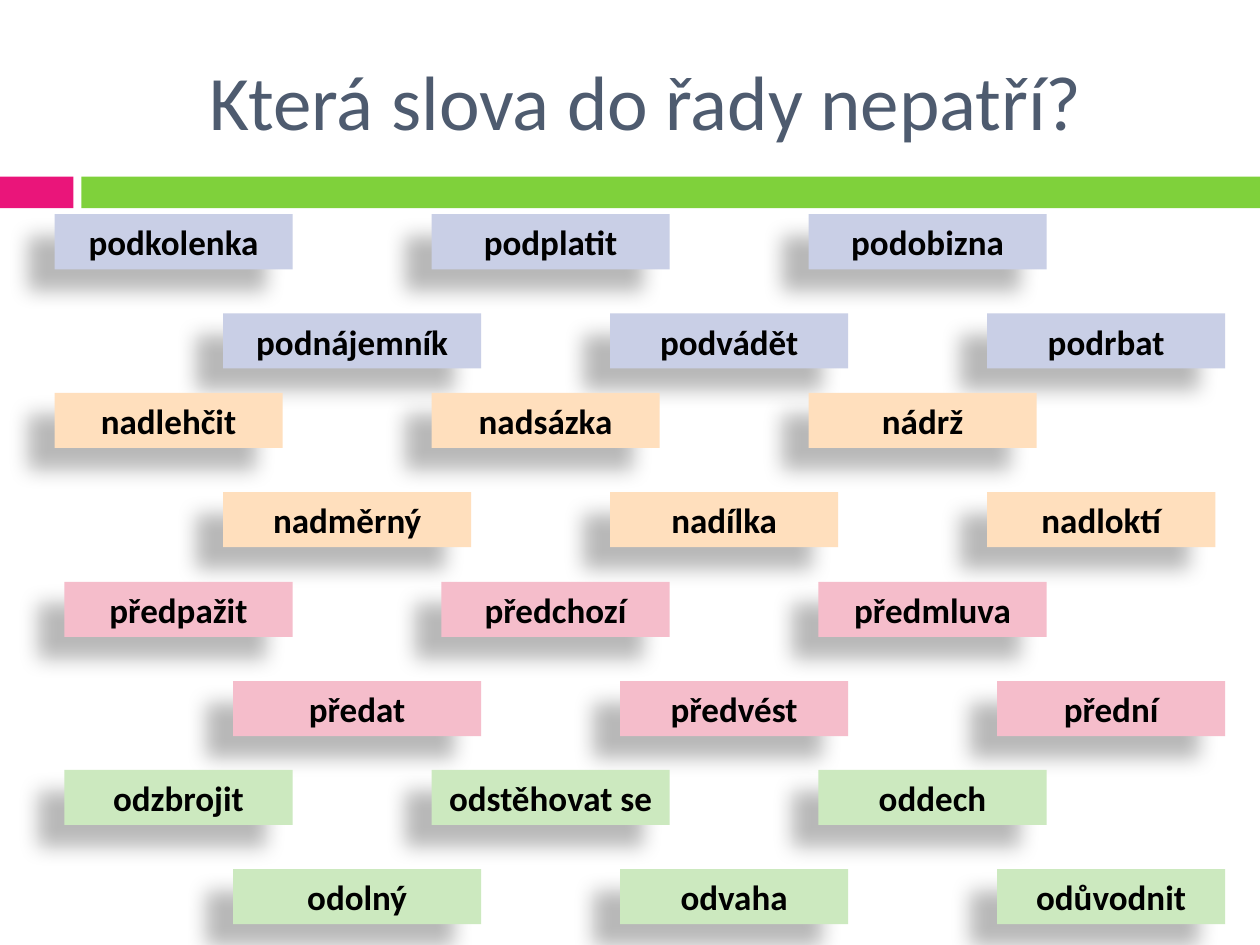
from lxml.etree import SubElement
from pptx import Presentation
from pptx.dml.color import RGBColor
from pptx.enum.shapes import MSO_SHAPE
from pptx.enum.text import MSO_ANCHOR, PP_ALIGN
from pptx.oxml.ns import qn
from pptx.util import Cm, Pt

TITLE = "Která slova do řady nepatří?"

# Each group: fill, top, trim at left, trim at right, upper row, lower row (cm)
GROUPS = [
    ("C9CFE6", 4.32, 0, 0,
     ["podkolenka", "podplatit", "podobizna"],
     ["podnájemník", "podvádět", "podrbat"]),
    ("FFDFBD", 7.92, 0, 0.2,
     ["nadlehčit", "nadsázka", "nádrž"],
     ["nadměrný", "nadílka", "nadloktí"]),
    ("F5BDCB", 11.73, 0.2, 0,
     ["předpažit", "předchozí", "předmluva"],
     ["předat", "předvést", "přední"]),
    ("CCE9BF", 15.52, 0.2, 0,
     ["odzbrojit", "odstěhovat se", "oddech"],
     ["odolný", "odvaha", "odůvodnit"]),
]
FULL_WIDTH_WORDS = {"odstěhovat se"}

# Left and width of the three slots in the upper and the lower row (cm)
SLOTS = [
    [(1.1, 4.8), (8.7, 4.8), (16.3, 4.8)],
    [(4.5, 5.2), (12.3, 4.8), (19.9, 4.8)],
]
ROW_STEP = 2.0
CARD_HEIGHT = 1.11

# Header bars: left, width, fill (cm)
BARS = [(0, 1.48, "EA157A"), (1.64, 23.76, "7FD13B")]


def color(value):
    return RGBColor.from_string(value)


def write(box, text, size, ink, bold=False):
    frame = box.text_frame
    frame.word_wrap = True
    frame.vertical_anchor = MSO_ANCHOR.MIDDLE
    frame.text = text
    para = frame.paragraphs[0]
    para.alignment = PP_ALIGN.CENTER
    font = para.runs[0].font
    font.name, font.size, font.bold = "Calibri", Pt(size), bold
    font.color.rgb = color(ink)


def add_box(page, left, top, width, height, fill):
    box = page.shapes.add_shape(
        MSO_SHAPE.RECTANGLE, Cm(left), Cm(top), Cm(width), Cm(height))
    box.shadow.inherit = False
    box.fill.solid()
    box.fill.fore_color.rgb = color(fill)
    box.line.fill.background()
    return box


def add_shadow(box):
    """Soft shadow falling to the lower left."""
    effects = box._element.spPr.find(qn("a:effectLst"))
    shadow = SubElement(effects, qn("a:outerShdw"), blurRad=str(Pt(11.8)),
                        dist=str(Pt(19.7)), dir=str(141 * 60000),
                        algn="ctr", rotWithShape="0")
    tint = SubElement(shadow, qn("a:srgbClr"), val="000000")
    SubElement(tint, qn("a:alpha"), val="28000")


deck = Presentation()
deck.slide_width, deck.slide_height = Cm(25.4), Cm(19.05)
page = deck.slides.add_slide(deck.slide_layouts[6])

# Header
for left, width, fill in BARS:
    add_box(page, left, 3.56, width, 0.64, fill)
title = page.shapes.add_textbox(Cm(1.7), Cm(0.64), Cm(22.66), Cm(2.74))
write(title, TITLE, 44, "4E5B6F")

# Word cards
for fill, group_top, trim_left, trim_right, *rows in GROUPS:
    for row, (words, slots) in enumerate(zip(rows, SLOTS)):
        for word, (left, width) in zip(words, slots):
            inset = 0 if word in FULL_WIDTH_WORDS else trim_left
            card = add_box(page, left + inset, group_top + row * ROW_STEP,
                           width - inset - trim_right, CARD_HEIGHT, fill)
            add_shadow(card)
            write(card, word, 20, "000000", bold=True)

deck.save("out.pptx")
